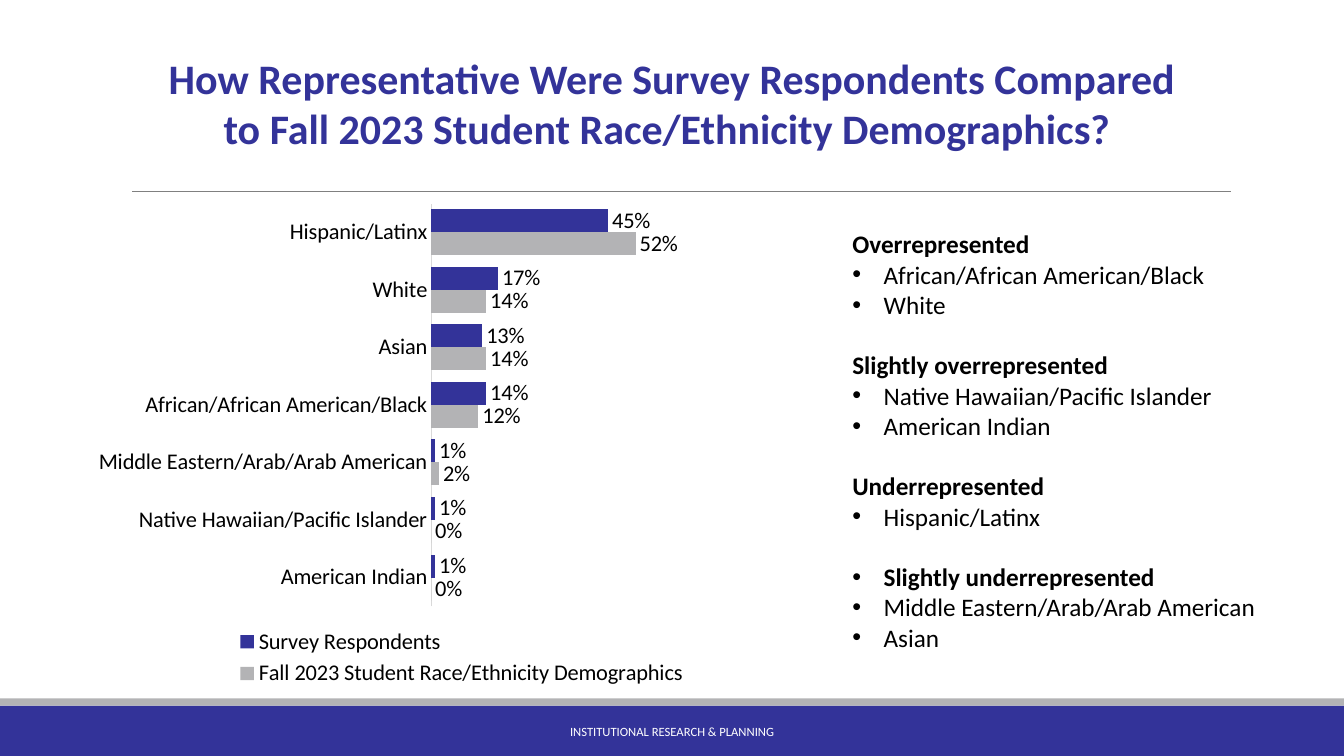
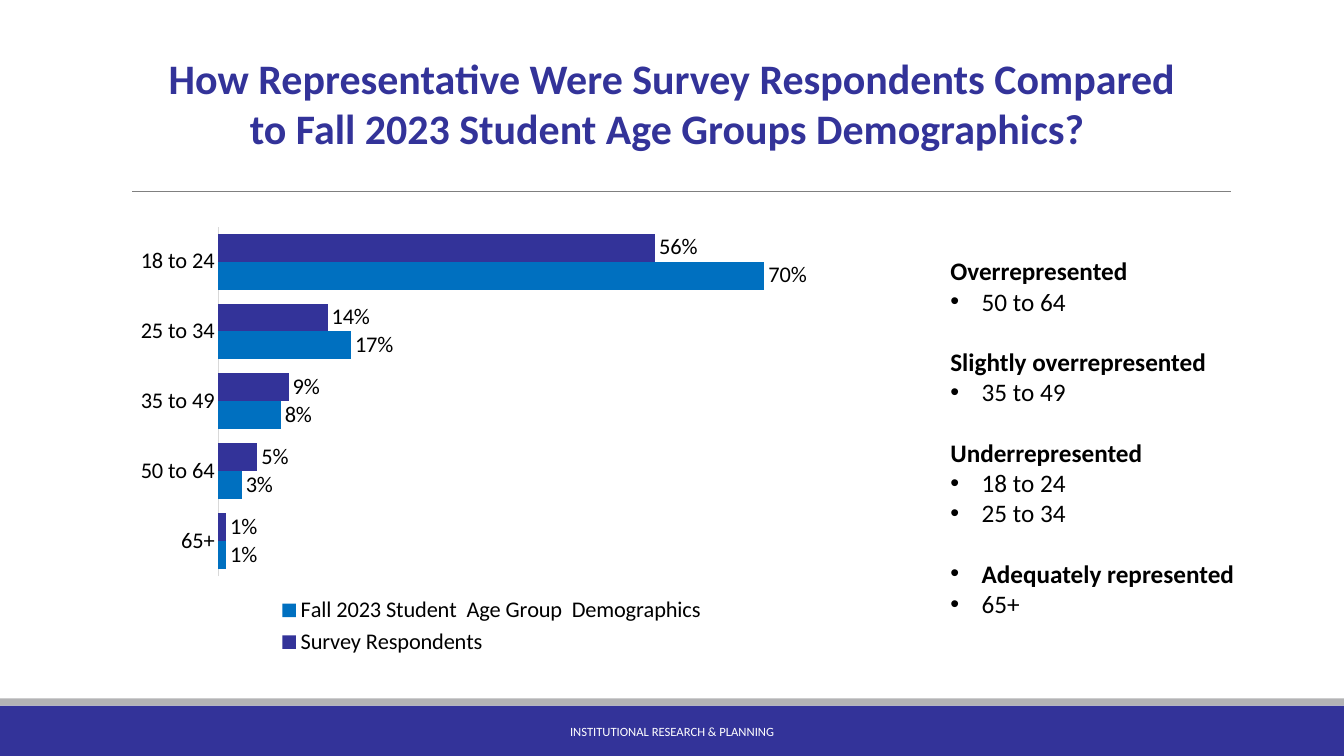
from lxml.etree import SubElement
from pptx import Presentation
from pptx.chart.data import CategoryChartData
from pptx.dml.color import RGBColor
from pptx.enum.chart import (XL_CHART_TYPE as ChartType, XL_LABEL_POSITION as LabelPos,
                             XL_LEGEND_POSITION as LegendPos, XL_TICK_MARK as Tick)
from pptx.enum.shapes import MSO_CONNECTOR as Connector, MSO_SHAPE as Shape
from pptx.enum.text import MSO_ANCHOR as Anchor, PP_ALIGN as Align
from pptx.oxml.ns import qn
from pptx.util import Cm, Pt

COLORS = {"indigo": "333399", "silver": "B3B3B5", "blue": "0070C0", "rule": "808080",
          "axis": "D9D9D9", "text": "000000", "white": "FFFFFF"}
FONT = "Calibri"
INDENT = Cm(0.79)
SURVEY = "Survey Respondents "

PAGES = [
    {
        "title": "How Representative Were Survey Respondents Compared "
                 "to Fall 2023 Student Race/Ethnicity Demographics? ",
        "chart_box": (2.11, 4.88, 19.05, 12.55),
        "categories": ["American Indian", "Native Hawaiian/Pacific Islander",
                       "Middle Eastern/Arab/Arab American", "African/African American/Black",
                       "Asian", "White", "Hispanic/Latinx"],
        "series": [
            ("Fall 2023 Student Race/Ethnicity Demographics", "silver",
             [0, 0, 0.02, 0.12, 0.14, 0.14, 0.52]),
            (SURVEY, "indigo", [0.01, 0.01, 0.01, 0.14, 0.13, 0.17, 0.45]),
        ],
        "axis_max": 1,
        "top_down": False,
        "findings_box": (21.23, 5.64, 11, 11.02),
        "findings": [
            ("Overrepresented", ["African/African American/Black", "White"]),
            ("Slightly overrepresented", ["Native Hawaiian/Pacific Islander", "American Indian"]),
            ("Underrepresented", ["Hispanic/Latinx"]),
            ("Slightly underrepresented", ["Middle Eastern/Arab/Arab American", "Asian"]),
        ],
    },
    {
        "title": "How Representative Were Survey Respondents Compared "
                 "to Fall 2023 Student Age Groups Demographics? ",
        "chart_box": (3.18, 5.49, 18.42, 11.15),
        "categories": ["18 to 24", "25 to 34", "35 to 49", "50 to 64", "65+"],
        "series": [
            (SURVEY, "indigo", [0.56, 0.14, 0.09, 0.05, 0.01]),
            ("Fall 2023 Student  Age Group  Demographics", "blue",
             [0.7, 0.17, 0.08, 0.03, 0.01]),
        ],
        "axis_max": None,
        "top_down": True,
        "findings_box": (23.7, 6.32, 9.73, 9.5),
        "findings": [
            ("Overrepresented", ["50 to 64"]),
            ("Slightly overrepresented", ["35 to 49"]),
            ("Underrepresented", ["18 to 24", "25 to 34"]),
            ("Adequately represented", ["65+"]),
        ],
    },
]


def style_font(font, size, color, bold=False):
    font.name, font.size, font.bold = FONT, Pt(size), bold
    font.color.rgb = RGBColor.from_string(COLORS[color])


def add_line(paragraph, text, size, color, bold=False, bulleted=False):
    run = paragraph.add_run()
    run.text = text
    style_font(run.font, size, color, bold)
    if bulleted:
        props = paragraph._p.get_or_add_pPr()
        props.set("marL", str(INDENT))
        props.set("indent", str(-INDENT))
        SubElement(props, qn("a:buFont")).set("typeface", "Arial")
        SubElement(props, qn("a:buChar")).set("char", "•")


prs = Presentation()
prs.slide_width, prs.slide_height = Cm(33.87), Cm(19.05)
layout = prs.slide_layouts[5]
for holder in list(layout.placeholders)[1:]:
    holder.element.getparent().remove(holder.element)
slides = [prs.slides.add_slide(layout) for _ in PAGES]

shared = slides[0].shapes
for top, height, color in [(17.78, 1.27, "indigo"), (17.6, 0.18, "silver")]:
    band = shared.add_shape(Shape.RECTANGLE, 0, Cm(top), prs.slide_width, Cm(height))
    band.shadow.inherit = False
    band.fill.solid()
    band.fill.fore_color.rgb = RGBColor.from_string(COLORS[color])
    band.line.fill.background()
    layout.shapes.element.append(band.element)
rule = shared.add_connector(Connector.STRAIGHT, Cm(3.33), Cm(4.82), Cm(31.01), Cm(4.82))
rule.line.color.rgb = RGBColor.from_string(COLORS["rule"])
rule.line.width = Pt(0.5)
SubElement(rule.element.spPr, qn("a:effectLst"))
layout.shapes.element.append(rule.element)

for slide, page in zip(slides, PAGES):
    title = slide.shapes.title
    title.left, title.top, title.width, title.height = Cm(3.68), Cm(1.19), Cm(26.52), Cm(2.82)
    title.text_frame.vertical_anchor = Anchor.TOP
    heading = title.text_frame.paragraphs[0]
    heading.alignment = Align.CENTER
    add_line(heading, page["title"], 30, "indigo", bold=True)

    footer = slide.shapes.add_textbox(Cm(10.24), Cm(17.93), Cm(13.39), Cm(1.02)).text_frame
    footer.word_wrap = True
    footer.vertical_anchor = Anchor.MIDDLE
    footer.paragraphs[0].alignment = Align.CENTER
    add_line(footer.paragraphs[0], "INSTITUTIONAL RESEARCH & PLANNING", 9, "white")

    shares = CategoryChartData(number_format="0%")
    shares.categories = page["categories"]
    for name, _, values in page["series"]:
        shares.add_series(name, values)
    chart = slide.shapes.add_chart(ChartType.BAR_CLUSTERED,
                                   *map(Cm, page["chart_box"]), shares).chart
    style_font(chart.font, 16, "text")
    chart.has_title = False
    chart.has_legend = True
    chart.legend.position = LegendPos.BOTTOM
    chart.legend.include_in_layout = False
    style_font(chart.legend.font, 16, "text")

    groups = chart.category_axis
    groups.major_tick_mark = groups.minor_tick_mark = Tick.NONE
    groups.reverse_order = page["top_down"]
    groups.format.line.color.rgb = RGBColor.from_string(COLORS["axis"])
    groups.format.line.width = Pt(0.75)
    style_font(groups.tick_labels.font, 16, "text")
    percent = chart.value_axis
    percent.visible = False
    percent.has_major_gridlines = False
    percent.minimum_scale = 0
    percent.maximum_scale = page["axis_max"]

    bars = chart.plots[0]
    bars.gap_width, bars.overlap, bars.vary_by_categories = 50, 0, False
    for series, (_, color, _) in zip(bars.series, page["series"]):
        series.format.fill.solid()
        series.format.fill.fore_color.rgb = RGBColor.from_string(COLORS[color])
        labels = series.data_labels
        labels.show_value = True
        labels.position = LabelPos.OUTSIDE_END
        labels.number_format, labels.number_format_is_linked = "0%", False
        style_font(labels.font, 16, "text")

    findings = slide.shapes.add_textbox(*map(Cm, page["findings_box"])).text_frame
    findings.word_wrap = True
    last = len(page["findings"]) - 1
    for i, (verdict, members) in enumerate(page["findings"]):
        line = findings.add_paragraph() if i else findings.paragraphs[0]
        if i:
            line.space_before = Pt(21.6)
        add_line(line, verdict, 18, "text", bold=True, bulleted=i == last)
        for member in members:
            add_line(findings.add_paragraph(), member, 18, "text", bulleted=True)

prs.save("out.pptx")
